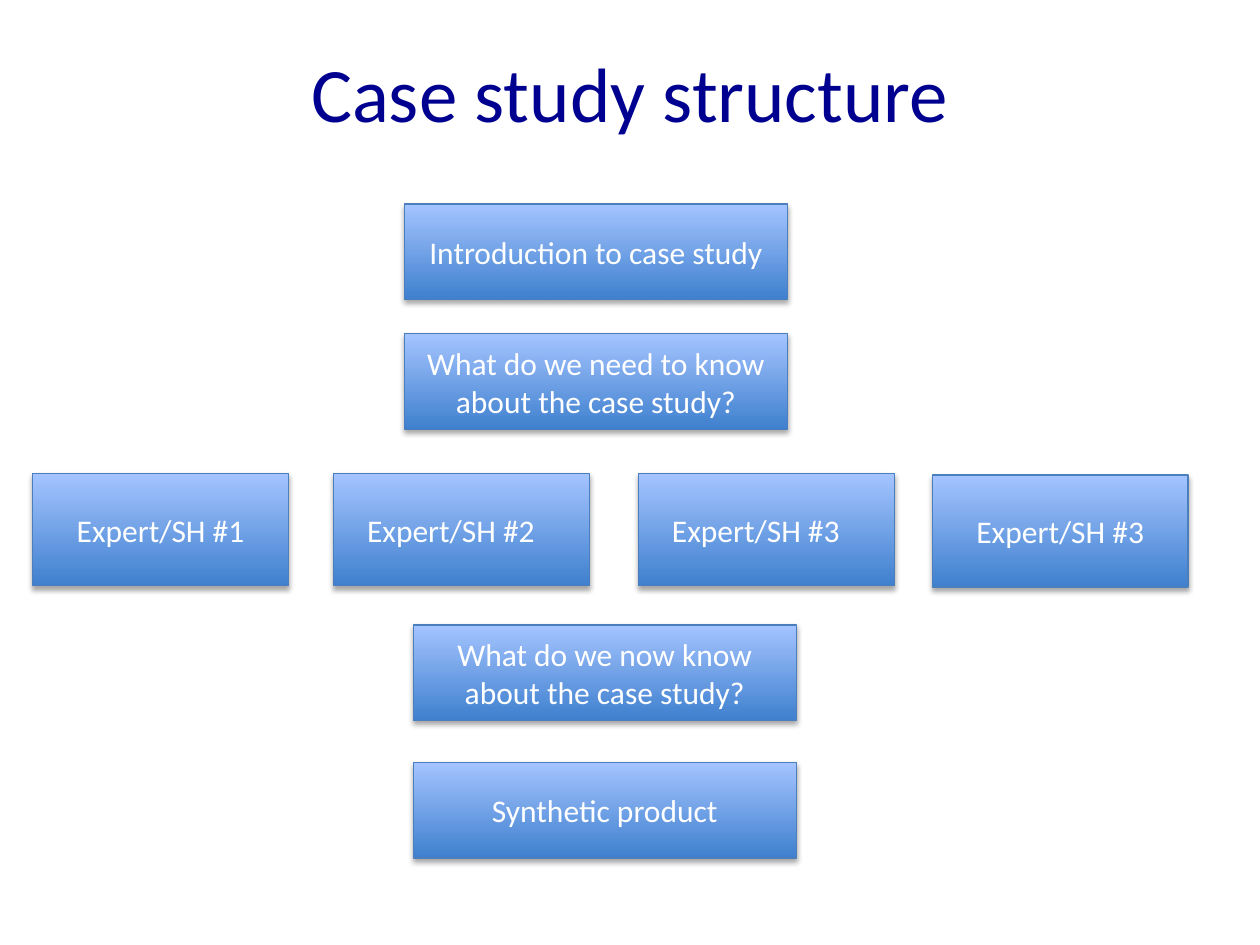
from dataclasses import dataclass

from lxml import etree
from pptx import Presentation, util as u
from pptx.dml.color import RGBColor
from pptx.enum import shapes, text
from pptx.oxml import ns


@dataclass(frozen=True)
class Theme:
    """Colours and type of the slide."""
    font: str = "Calibri"
    title: str = "000090"
    label: str = "FFFFFF"
    bottom: str = "3F80CE"
    top: str = "A4C4FF"
    line: str = "4B7EBC"
    shadow: str = "000000"
    title_size: int = 44
    label_size: int = 18


T = Theme()
STEP_SIZE = (3.04, 0.76)
EXPERT_SIZE = (2.03, 0.89)
STEPS = [
    ("Introduction to case study", 3.21, 1.62),
    ("What do we need to know about the case study?", 3.21, 2.65),
    ("What do we now know about the case study?", 3.28, 4.96),
    ("Synthetic product", 3.28, 6.05),
]
EXPERTS = [
    ("Expert/SH #1", 0.26, 3.76, 0.1),
    ("Expert/SH #2", 2.65, 3.76, 0.27),
    ("Expert/SH #3", 5.07, 3.76, 0.27),
    ("Expert/SH #3", 7.4, 3.77, 0.1),
]


def write(sp, words, *, size, color, right=0.1):
    """Put centred text into a shape."""
    tf = sp.text_frame
    tf.word_wrap = True
    tf.vertical_anchor = text.MSO_ANCHOR.MIDDLE
    tf.margin_right = u.Inches(right)
    p = tf.paragraphs[0]
    p.alignment = text.PP_ALIGN.CENTER
    r = p.add_run()
    r.text = words
    r.font.name = T.font
    r.font.size = u.Pt(size)
    r.font.color.rgb = RGBColor.from_string(color)


def add_shadow(sp):
    """Give a shape a soft shadow straight below it."""
    sp.shadow.inherit = False
    effects = sp._element.spPr.find(ns.qn("a:effectLst"))
    outer = etree.SubElement(effects, ns.qn("a:outerShdw"), blurRad=str(u.Pt(3.1)),
                             dist=str(u.Pt(1.8)), dir="5400000", rotWithShape="0")
    color = etree.SubElement(outer, ns.qn("a:srgbClr"), val=T.shadow)
    etree.SubElement(color, ns.qn("a:alpha"), val="35000")


def add_title(s, words):
    """Add the slide title."""
    sp = s.shapes.add_textbox(*map(u.Inches, (0.5, 0.1, 9, 1.25)))
    write(sp, words, size=T.title_size, color=T.title)


def add_box(s, words, left, top, size, right=0.1):
    """Add a shaded box with a label."""
    sp = s.shapes.add_shape(shapes.MSO_SHAPE.RECTANGLE, *map(u.Inches, (left, top, *size)))
    sp.fill.gradient()
    sp.fill.gradient_angle = 90
    for stop, color, position in zip(sp.fill.gradient_stops, (T.bottom, T.top), (0, 1)):
        stop.color.rgb = RGBColor.from_string(color)
        stop.position = position
    sp.line.color.rgb = RGBColor.from_string(T.line)
    sp.line.width = u.Pt(0.75)
    add_shadow(sp)
    write(sp, words, size=T.label_size, color=T.label, right=right)


def main():
    """Build the slide and save it."""
    prs = Presentation()
    prs.slide_width, prs.slide_height = u.Inches(10), u.Inches(7.5)
    s = prs.slides.add_slide(prs.slide_layouts[6])
    add_title(s, "Case study structure")
    for words, left, top in STEPS[:2]:
        add_box(s, words, left, top, STEP_SIZE)
    for words, left, top, right in EXPERTS:
        add_box(s, words, left, top, EXPERT_SIZE, right)
    for words, left, top in STEPS[2:]:
        add_box(s, words, left, top, STEP_SIZE)
    prs.save("out.pptx")


if __name__ == "__main__":
    main()
